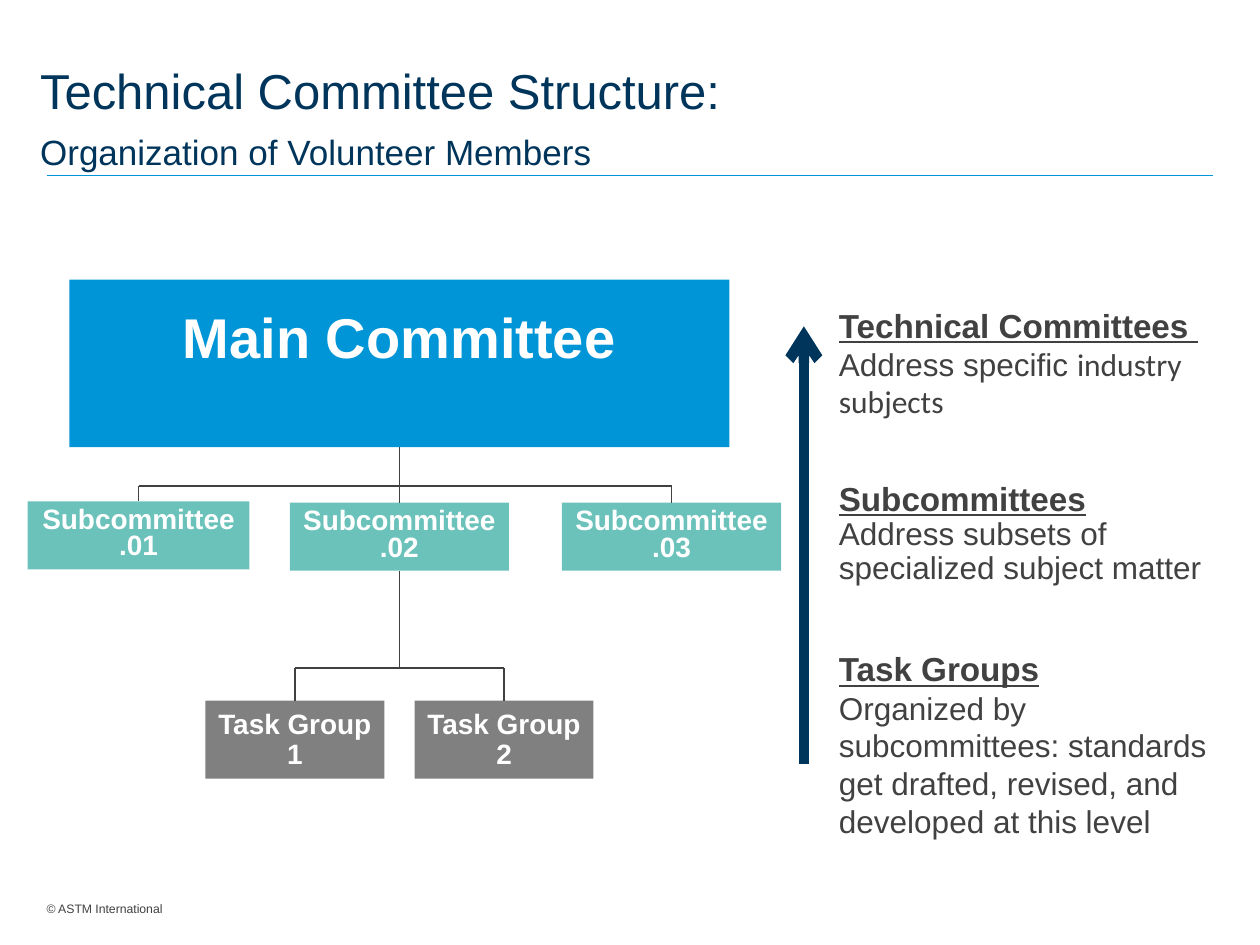
"""Build a slide showing how a technical committee is organised."""
from lxml import etree
from pptx import Presentation
from pptx.dml.color import RGBColor
from pptx.enum.shapes import MSO_CONNECTOR, MSO_SHAPE
from pptx.enum.text import MSO_ANCHOR, PP_ALIGN
from pptx.oxml.ns import qn
from pptx.util import Pt

PX = 9144
RECT = MSO_SHAPE.RECTANGLE
LINE = MSO_CONNECTOR.STRAIGHT
TOP, MID = MSO_ANCHOR.TOP, MSO_ANCHOR.MIDDLE
LEFT, CENTER = PP_ALIGN.LEFT, PP_ALIGN.CENTER
rgb = RGBColor.from_string
NAVY, BLUE, TEAL = "00355B", "0095D6", "6BC2BB"
GRAY, INK, WHITE = "808080", "414141", "FFFFFF"

deck = Presentation()
deck.slide_width, deck.slide_height = 1000 * PX, 750 * PX
slide = deck.slides.add_slide(deck.slide_layouts[6])
shapes = slide.shapes


def write(shape, paras, hue, align=LEFT, pad=(10, 5), wrap=True, anchor=TOP):
    frame = shape.text_frame
    frame.word_wrap, frame.vertical_anchor = wrap, anchor
    frame.margin_left = frame.margin_right = pad[0] * PX
    frame.margin_top = frame.margin_bottom = pad[1] * PX
    for i, (gap, runs) in enumerate(paras):
        para = frame.add_paragraph() if i else frame.paragraphs[0]
        para.alignment, para.line_spacing = align, gap
        for j, (text, size, bold, under, face) in enumerate(runs):
            if j and text.startswith("\n"):
                para.add_line_break()
            run = para.add_run()
            run.text = text.lstrip("\n")
            font = run.font
            font.size, font.name = Pt(size), face
            font.bold, font.underline = bold, under
            font.color.rgb = rgb(hue)


def link(x1, y1, x2, y2, hue=INK, width=1):
    line = shapes.add_connector(LINE, x1 * PX, y1 * PX, x2 * PX, y2 * PX)
    line.line.color.rgb, line.line.width = rgb(hue), Pt(width)
    etree.SubElement(line._element.spPr, qn("a:effectLst"))
    return line


foot = shapes.add_textbox(37 * PX, 715 * PX, 113 * PX, 12 * PX)
write(foot, [(1, [("© ASTM International", 7, False, False, "Arial")])],
      INK, pad=(0, 0), wrap=False)
link(37, 139, 963, 139, BLUE, 0.5)

title = shapes.add_textbox(22 * PX, 42 * PX, 978 * PX, 106 * PX)
write(title, [(Pt(30), [
    ("Technical Committee Structure: ", 28, False, False, "Arial"),
    ("\nOrganization of Volunteer Members", 20, False, False, "Arial"),
])], NAVY, anchor=MID)

nodes = [
    (55, 222, 524, 133, BLUE, 32, 18, [("Main Committee", 1)]),
    (22, 398, 176, 54, TEAL, 16, 5, [("Subcommittee", 0.8), (".01", 0.8)]),
    (230, 399, 174, 54, TEAL, 16, 5, [("Subcommittee", 0.8), (".02", 0.8)]),
    (446, 399, 174, 54, TEAL, 16, 5, [("Subcommittee", 0.8), (".03", 0.8)]),
    (163, 556, 142, 62, GRAY, 16, 5, [("Task Group", 1), ("1", 0.9)]),
    (329, 556, 142, 62, GRAY, 16, 5, [("Task Group", 1), ("2", 0.9)]),
]
boxes = []
for x, y, w, h, hue, size, pad, rows in nodes:
    box = shapes.add_shape(RECT, x * PX, y * PX, w * PX, h * PX)
    box.shadow.inherit = False
    box.fill.solid()
    box.fill.fore_color.rgb = rgb(hue)
    box.line.fill.background()
    paras = [(gap, [(text, size, True, False, "Arial")]) for text, gap in rows]
    write(box, paras, WHITE, CENTER, (10, pad), False)
    boxes.append(box)
main, sub1, sub2, sub3, task1, task2 = boxes

trunk = link(317, 355, 317, 399)
trunk.begin_connect(main, 2)
trunk.end_connect(sub2, 0)
stem = link(317, 453, 317, 530)
stem.begin_connect(sub2, 2)
for rail, pair in ((386, (sub1, sub3)), (530, (task1, task2))):
    ends = [(box.left + box.width // 2) // PX for box in pair]
    link(ends[0], rail, ends[1], rail)
    for x, box in zip(ends, pair):
        link(x, rail, x, box.top // PX).end_connect(box, 0)

notes = [
    (237, 330, 103, 1, "Technical Committees ",
     [("Address specific ", "Arial"), ("industry subjects", "Calibri")]),
    (378, 320, 93, 0.9, "Subcommittees",
     [("Address subsets of specialized subject matter", "Arial")]),
    (510, 325, 163, 1, "Task Groups",
     [("Organized by subcommittees: standards get drafted, revised, "
       "and developed at this level", "Arial")]),
]
for y, w, h, gap, head, body in notes:
    note = shapes.add_textbox(656 * PX, y * PX, w * PX, h * PX)
    runs = [(text, 18, False, False, face) for text, face in body]
    write(note, [(gap, [(head, 19, True, True, "Arial")]), (gap, runs)], INK)

arrow = link(638, 606, 638, 259, NAVY, 6)
etree.SubElement(arrow.line._get_or_add_ln(), qn("a:tailEnd"), type="arrow")

deck.save("out.pptx")
